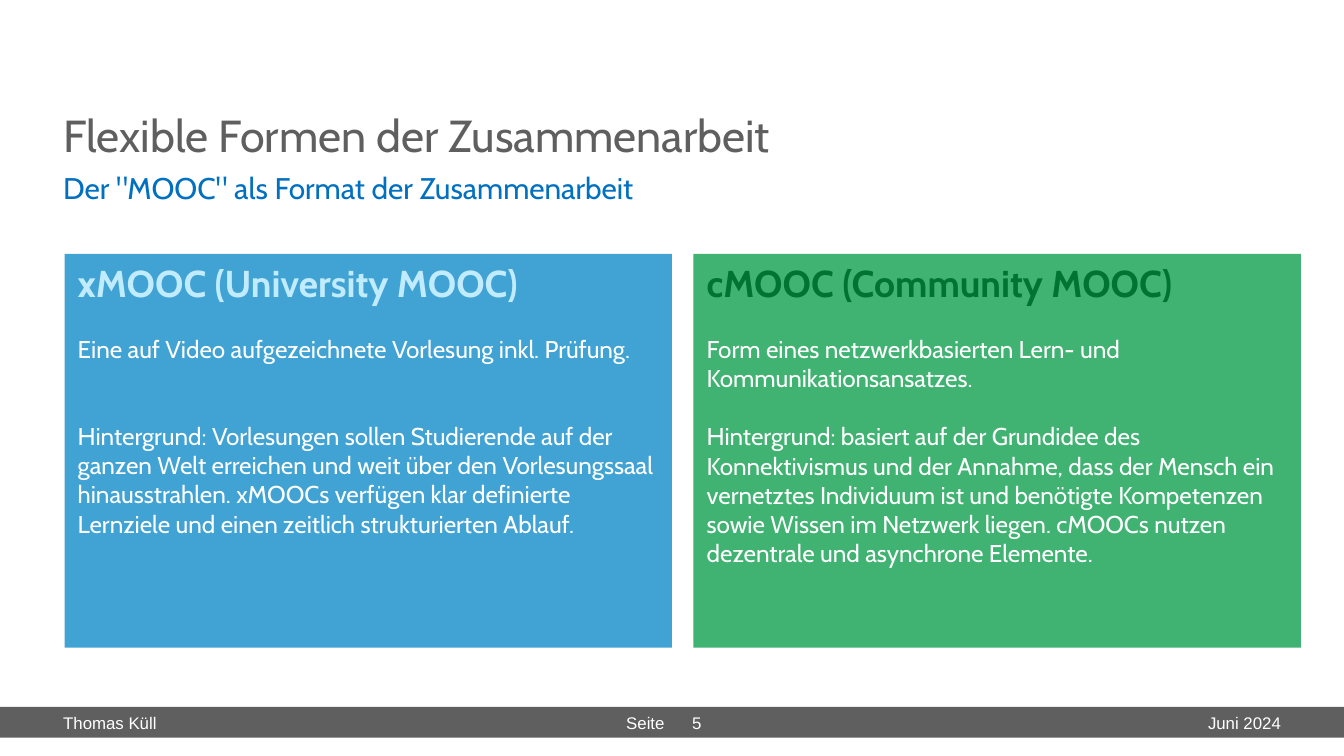
import pptx
import pptx.dml.color
import pptx.enum.shapes
import pptx.enum.text
import pptx.oxml.ns
import pptx.util
from lxml import etree

Inches = pptx.util.Inches
Pt = pptx.util.Pt
RGBColor = pptx.dml.color.RGBColor
Align = pptx.enum.text.PP_ALIGN
Anchor = pptx.enum.text.MSO_ANCHOR
qn = pptx.oxml.ns.qn

WHITE = RGBColor(0xFF, 0xFF, 0xFF)
GREY = RGBColor(0x5F, 0x5F, 0x5F)
SUBTITLE_BLUE = RGBColor(0x00, 0x70, 0xC0)
PANEL_BLUE = RGBColor(0x00, 0x85, 0xC6)
PALE_BLUE = RGBColor(0xC1, 0xEB, 0xFF)
PANEL_GREEN = RGBColor(0x00, 0x9A, 0x44)
DARK_GREEN = RGBColor(0x00, 0x73, 0x33)

MARGIN = 0.47
FOOTER_TOP, FOOTER_HEIGHT = 5.26, 0.23
PANEL_LEFT, PANEL_TOP = 0.48, 1.89
PANEL_WIDTH, PANEL_HEIGHT, PANEL_GAP = 4.52, 2.93, 0.16
BODY_LINE = 15.5

PANELS = [
    (PANEL_BLUE, PALE_BLUE, "xMOOC (University MOOC)",
     "Eine auf Video aufgezeichnete Vorlesung inkl. Prüfung.", 2,
     "Hintergrund: Vorlesungen sollen Studierende auf der ganzen Welt erreichen "
     "und weit über den Vorlesungssaal hinausstrahlen. xMOOCs verfügen klar "
     "definierte Lernziele und einen zeitlich strukturierten Ablauf."),
    (PANEL_GREEN, DARK_GREEN, "cMOOC (Community MOOC)",
     "Form eines netzwerkbasierten Lern- und Kommunikationsansatzes.", 1,
     "Hintergrund: basiert auf der Grundidee des Konnektivismus und der Annahme, "
     "dass der Mensch ein vernetztes Individuum ist und benötigte Kompetenzen "
     "sowie Wissen im Netzwerk liegen. cMOOCs nutzen dezentrale und asynchrone "
     "Elemente."),
]


class SlideBuilder:
    heading_font = "Cabin"
    footer_font = "Arial"

    def __init__(self, page):
        self.page = page

    def style(self, para, font, size, color, bold=False):
        for span in para.runs:
            span.font.name = font
            span.font.size = Pt(size)
            span.font.color.rgb = color
            span.font.bold = bold

    def rectangle(self, left, top, width, height, color, opacity=100):
        box = self.page.shapes.add_shape(
            pptx.enum.shapes.MSO_SHAPE.RECTANGLE,
            Inches(left), Inches(top), Inches(width), Inches(height))
        box.shadow.inherit = False
        box.line.fill.background()
        box.fill.solid()
        box.fill.fore_color.rgb = color
        if opacity < 100:
            tint = box.fill._xPr.find(".//" + qn("a:srgbClr"))
            etree.SubElement(tint, qn("a:alpha"), val=str(opacity * 1000))
        return box

    def label(self, text, left, top, width, height, font, size, color,
              align=Align.LEFT, anchor=Anchor.TOP):
        box = self.page.shapes.add_textbox(
            Inches(left), Inches(top), Inches(width), Inches(height))
        frame = box.text_frame
        frame.word_wrap = True
        frame.vertical_anchor = anchor
        frame.margin_left = frame.margin_right = 0
        frame.margin_top = frame.margin_bottom = 0
        frame.text = text
        para = frame.paragraphs[0]
        para.alignment = align
        self.style(para, font, size, color)
        return para

    def footer(self, text, left, width, align=Align.LEFT):
        return self.label(text, left, FOOTER_TOP, width, FOOTER_HEIGHT,
                          self.footer_font, 9, WHITE, align, Anchor.MIDDLE)

    def tab_stop(self, para, position):
        tabs = etree.SubElement(para._p.get_or_add_pPr(), qn("a:tabLst"))
        etree.SubElement(tabs, qn("a:tab"), pos=str(Inches(position)), algn="l")

    def panel(self, left, fill, heading_color, heading, summary, gap_lines, background):
        box = self.rectangle(left, PANEL_TOP, PANEL_WIDTH, PANEL_HEIGHT, fill, 75)
        frame = box.text_frame
        frame.word_wrap = True
        frame.vertical_anchor = Anchor.TOP
        frame.text = "\n".join([heading, summary, background])
        title, intro, detail = frame.paragraphs
        self.style(title, self.heading_font, 20, heading_color, True)
        for para, lines in ((intro, 1), (detail, gap_lines)):
            para.space_before = Pt(lines * BODY_LINE)
            self.style(para, self.heading_font, 13, WHITE)
        for para in frame.paragraphs:
            para.alignment = Align.LEFT


def main():
    deck = pptx.Presentation()
    deck.slide_width = Inches(10)
    deck.slide_height = Inches(10 * 9 / 16)
    builder = SlideBuilder(deck.slides.add_slide(deck.slide_layouts[6]))

    builder.rectangle(0, FOOTER_TOP, 10, FOOTER_HEIGHT, GREY)
    builder.footer("Thomas Küll", MARGIN, 1.18)
    page_number = builder.footer("Seite\t5", 4.66, 0.8)
    builder.tab_stop(page_number, 0.49)
    builder.footer("Juni 2024", 8.35, 1.18, Align.RIGHT)

    builder.label('Der "MOOC" als Format der Zusammenarbeit', MARGIN, 1.26, 9.06, 0.27,
                  builder.heading_font, 16, SUBTITLE_BLUE)
    builder.label("Flexible Formen der Zusammenarbeit", MARGIN, 0.8, 9.06, 0.32,
                  builder.heading_font, 24, GREY)

    for index, content in enumerate(PANELS):
        builder.panel(PANEL_LEFT + index * (PANEL_WIDTH + PANEL_GAP), *content)

    deck.save("out.pptx")


if __name__ == "__main__":
    main()
